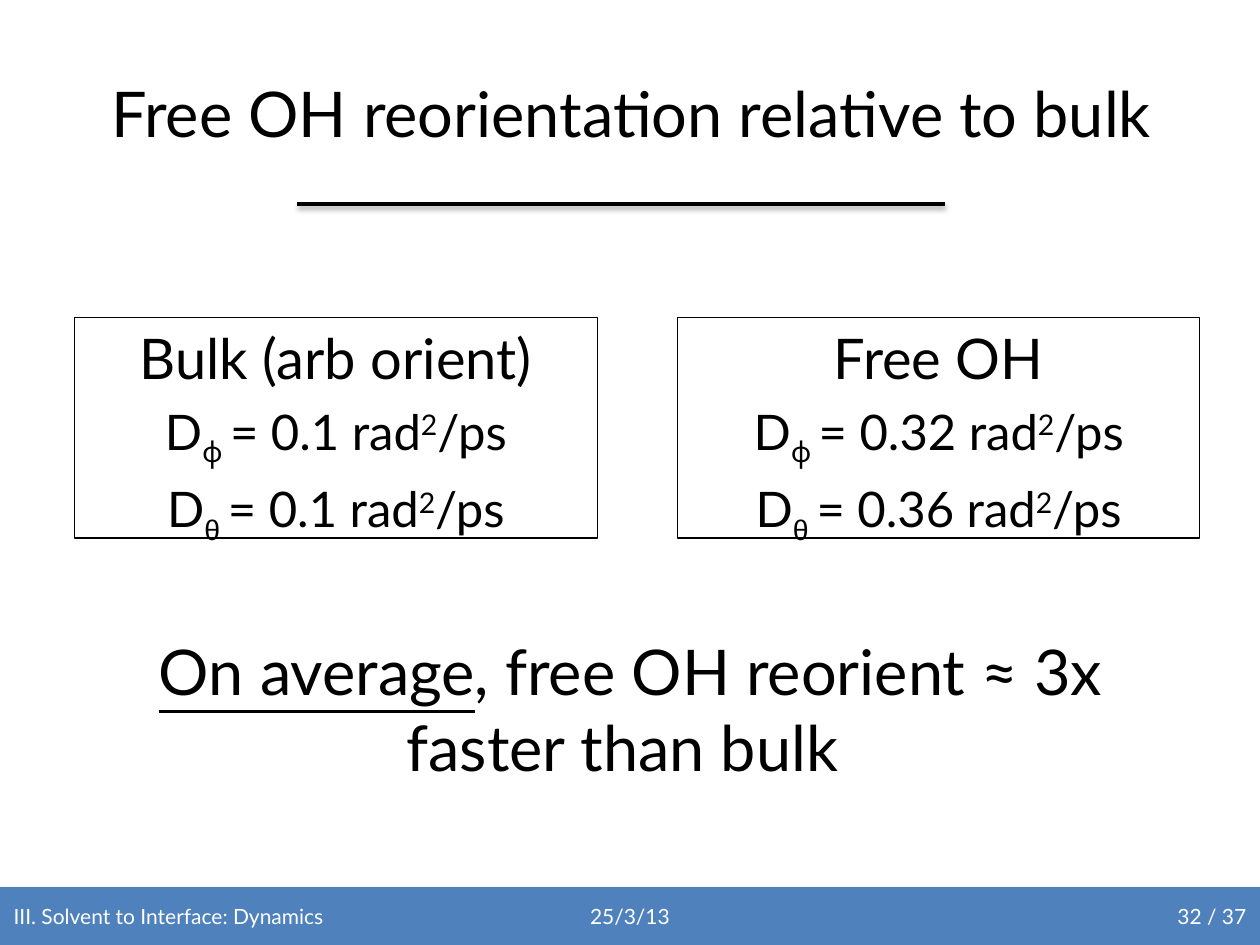
from lxml.etree import SubElement
from pptx import Presentation
from pptx.dml.color import RGBColor
from pptx.enum.shapes import MSO_CONNECTOR as Connector, MSO_SHAPE as Shape
from pptx.enum.text import MSO_ANCHOR as Anchor, PP_ALIGN as Align
from pptx.oxml.ns import qn
from pptx.util import Inches, Pt

BLACK, WHITE, BLUE = "000000", "FFFFFF", "4F81BD"
FONT = "Lato"


def color(value):
    return RGBColor.from_string(value)


def add_run(para, text, size, ink=BLACK, font=FONT, baseline=0, underline=False):
    run = para.add_run()
    run.text = text
    run.font.size = Pt(size)
    run.font.name = font
    run.font.color.rgb = color(ink)
    run.font.underline = underline
    if baseline:
        run.font._element.set("baseline", str(baseline * 1000))


def add_box(page, left, top, width, height, wrap=True):
    box = page.shapes.add_textbox(Inches(left), Inches(top), Inches(width), Inches(height))
    box.text_frame.word_wrap = wrap
    return box


def add_shadow(shape, blur, distance, opacity):
    properties = shape._element.spPr
    for old in properties.findall(qn("a:effectLst")):
        properties.remove(old)
    effects = SubElement(properties, qn("a:effectLst"))
    shadow = SubElement(effects, qn("a:outerShdw"), blurRad=str(Pt(blur)),
                        dist=str(Pt(distance)), dir="5400000", rotWithShape="0")
    ink = SubElement(shadow, qn("a:srgbClr"), val=BLACK)
    SubElement(ink, qn("a:alpha"), val=str(opacity * 1000))


def add_title(page, text, left, top, width, height):
    title = page.shapes.title
    title.left, title.top = Inches(left), Inches(top)
    title.width, title.height = Inches(width), Inches(height)
    title.text_frame.vertical_anchor = Anchor.MIDDLE
    para = title.text_frame.paragraphs[0]
    para.alignment = Align.CENTER
    add_run(para, text, 36)

    rule = page.shapes.add_connector(Connector.STRAIGHT, Inches(2.36), Inches(1.62),
                                     Inches(7.5), Inches(1.62))
    rule.line.color.rgb = color(BLACK)
    rule.line.width = Pt(2)
    add_shadow(rule, 3.1, 1.6, 38)


def add_diffusion_box(page, heading, phi, theta, left, top, width, height):
    box = add_box(page, left, top, width, height)
    box.line.color.rgb = color(BLACK)
    box.line.width = Pt(0.75)
    frame = box.text_frame
    add_run(frame.paragraphs[0], heading, 32)
    for symbol, font, value in (("ϕ", "Noto Sans", phi), ("θ", "Arial", theta)):
        para = frame.add_paragraph()
        add_run(para, "D", 28)
        add_run(para, f"{symbol} ", 28, font=font, baseline=-25)
        add_run(para, f"= {value} rad", 28)
        add_run(para, "2", 28, baseline=30)
        add_run(para, "/ps", 28)
    for para in frame.paragraphs:
        para.alignment = Align.CENTER
        para.space_after = Pt(6)


def add_conclusion(page, left, top, width, height):
    para = add_box(page, left, top, width, height).text_frame.paragraphs[0]
    para.alignment = Align.CENTER
    add_run(para, "On average", 36, underline=True)
    add_run(para, ", free OH reorient ≈ 3x faster than bulk ", 36)


def add_footer(page, left, top, width, height):
    bar = page.shapes.add_shape(Shape.RECTANGLE, Inches(left), Inches(top),
                                Inches(width), Inches(height))
    bar.fill.solid()
    bar.fill.fore_color.rgb = color(BLUE)
    bar.line.fill.background()
    add_shadow(bar, 3.1, 1.8, 35)
    labels = (
        ("III. Solvent to Interface: Dynamics", 0.01, 2.8, Align.LEFT),
        ("25/3/13", 4.58, 0.84, Align.CENTER),
        ("32 / 37", 9.15, 0.84, Align.RIGHT),
    )
    for text, offset, label_width, alignment in labels:
        label = add_box(page, left + offset, top + 0.08, label_width, 0.3, wrap=False)
        para = label.text_frame.paragraphs[0]
        para.alignment = alignment
        add_run(para, text, 12, WHITE)


def main():
    deck = Presentation()
    deck.slide_width, deck.slide_height = Inches(10), Inches(7.5)
    page = deck.slides.add_slide(deck.slide_layouts[5])
    add_title(page, "Free OH reorientation relative to bulk", 0.39, 0.38, 9.24, 1.03)
    add_diffusion_box(page, "Bulk (arb orient)", "0.1", "0.1", 0.59, 2.52, 4.15, 1.75)
    add_diffusion_box(page, "Free OH", "0.32", "0.36", 5.38, 2.52, 4.14, 1.75)
    add_conclusion(page, 0.55, 4.97, 8.91, 1.31)
    add_footer(page, 0, 7.04, 10, 0.46)
    deck.save("out.pptx")


if __name__ == "__main__":
    main()
